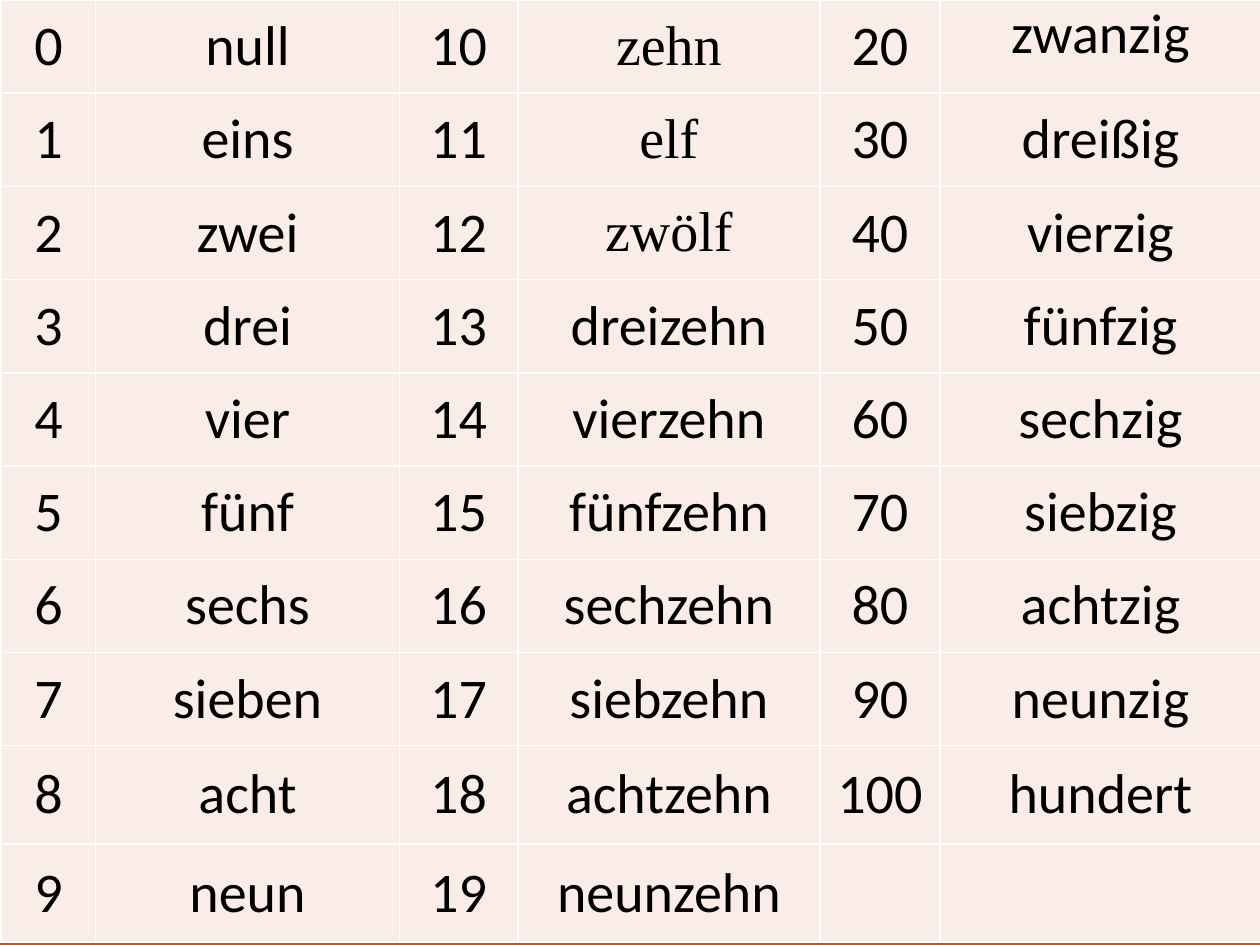
from typing import NamedTuple

from lxml.etree import SubElement
from pptx import Presentation
from pptx.dml.color import RGBColor
from pptx.enum.shapes import MSO_SHAPE as Shape
from pptx.enum.text import MSO_ANCHOR as Anchor, PP_ALIGN as Align
from pptx.oxml.ns import qn
from pptx.util import Inches, Pt

BLACK = RGBColor(0x00, 0x00, 0x00)
WHITE = RGBColor(0xFF, 0xFF, 0xFF)
PALE = RGBColor(0xFA, 0xED, 0xE7)
RUST = RGBColor(0xBD, 0x58, 0x2C)
ORANGE = RGBColor(0xE4, 0x83, 0x12)

SANS, SERIF = "Calibri", "Times New Roman"
COL_WIDTHS = [0.75, 2.41, 0.94, 2.4, 0.95, 2.55]
ROW_HEIGHTS = [0.74] * 8 + [0.78] * 2
SERIF_WORDS = {"zehn", "elf", "zwölf"}


class Bar(NamedTuple):
    top: float
    height: float
    color: RGBColor


class Series(NamedTuple):
    """Number words counted from start in equal steps."""
    start: int
    step: int
    words: list[str]


BARS = [Bar(7, 0.5, RUST), Bar(6.93, 0.07, ORANGE)]
SERIES = [
    Series(0, 1, ["null", "eins", "zwei", "drei", "vier", "fünf",
                  "sechs", "sieben", "acht", "neun"]),
    Series(10, 1, ["zehn", "elf", "zwölf", "dreizehn", "vierzehn", "fünfzehn",
                   "sechzehn", "siebzehn", "achtzehn", "neunzehn"]),
    Series(20, 10, ["zwanzig", "dreißig", "vierzig", "fünfzig", "sechzig",
                    "siebzig", "achtzig", "neunzig", "hundert"]),
]


def add_bar(s, bar: Bar) -> None:
    sp = s.shapes.add_shape(Shape.RECTANGLE, 0, Inches(bar.top),
                            Inches(10), Inches(bar.height))
    sp.shadow.inherit = False
    sp.fill.solid()
    sp.fill.fore_color.rgb = bar.color
    sp.line.fill.background()


def style_cell(cell) -> None:
    # Borders must come before the fill in the cell properties
    tc_pr = cell._tc.get_or_add_tcPr()
    for side in ("a:lnL", "a:lnR", "a:lnT", "a:lnB"):
        ln = SubElement(tc_pr, qn(side), w=str(Pt(1)))
        SubElement(SubElement(ln, qn("a:solidFill")), qn("a:srgbClr"),
                   val=str(WHITE))
    cell.fill.solid()
    cell.fill.fore_color.rgb = PALE
    cell.margin_left = cell.margin_right = Inches(0.05)
    cell.margin_top = cell.margin_bottom = 0
    cell.vertical_anchor = Anchor.MIDDLE


def write_cell(cell, text: str) -> None:
    p = cell.text_frame.paragraphs[0]
    p.alignment = Align.CENTER
    r = p.add_run()
    r.text = text
    r.font.size = Pt(32)
    r.font.name = SERIF if text in SERIF_WORDS else SANS
    r.font.color.rgb = BLACK


def add_number_table(s) -> None:
    table = s.shapes.add_table(len(ROW_HEIGHTS), len(COL_WIDTHS), Inches(0.01),
                               0, Inches(9.99), Inches(7.5)).table
    table.first_row = table.horz_banding = False
    for column, width in zip(table.columns, COL_WIDTHS):
        column.width = Inches(width)
    for row, height in zip(table.rows, ROW_HEIGHTS):
        row.height = Inches(height)
    for cell in table.iter_cells():
        style_cell(cell)

    # Each series fills a column of figures and a column of words
    for i, series in enumerate(SERIES):
        for row, word in enumerate(series.words):
            write_cell(table.cell(row, 2 * i), str(series.start + row * series.step))
            write_cell(table.cell(row, 2 * i + 1), word)
    table.cell(0, 5).vertical_anchor = Anchor.TOP


def main() -> None:
    prs = Presentation()
    prs.slide_width, prs.slide_height = Inches(10), Inches(7.5)
    s = prs.slides.add_slide(prs.slide_layouts[6])

    # Footer bars behind the table
    for bar in BARS:
        add_bar(s, bar)

    # German numbers
    add_number_table(s)
    prs.save("out.pptx")


if __name__ == "__main__":
    main()
